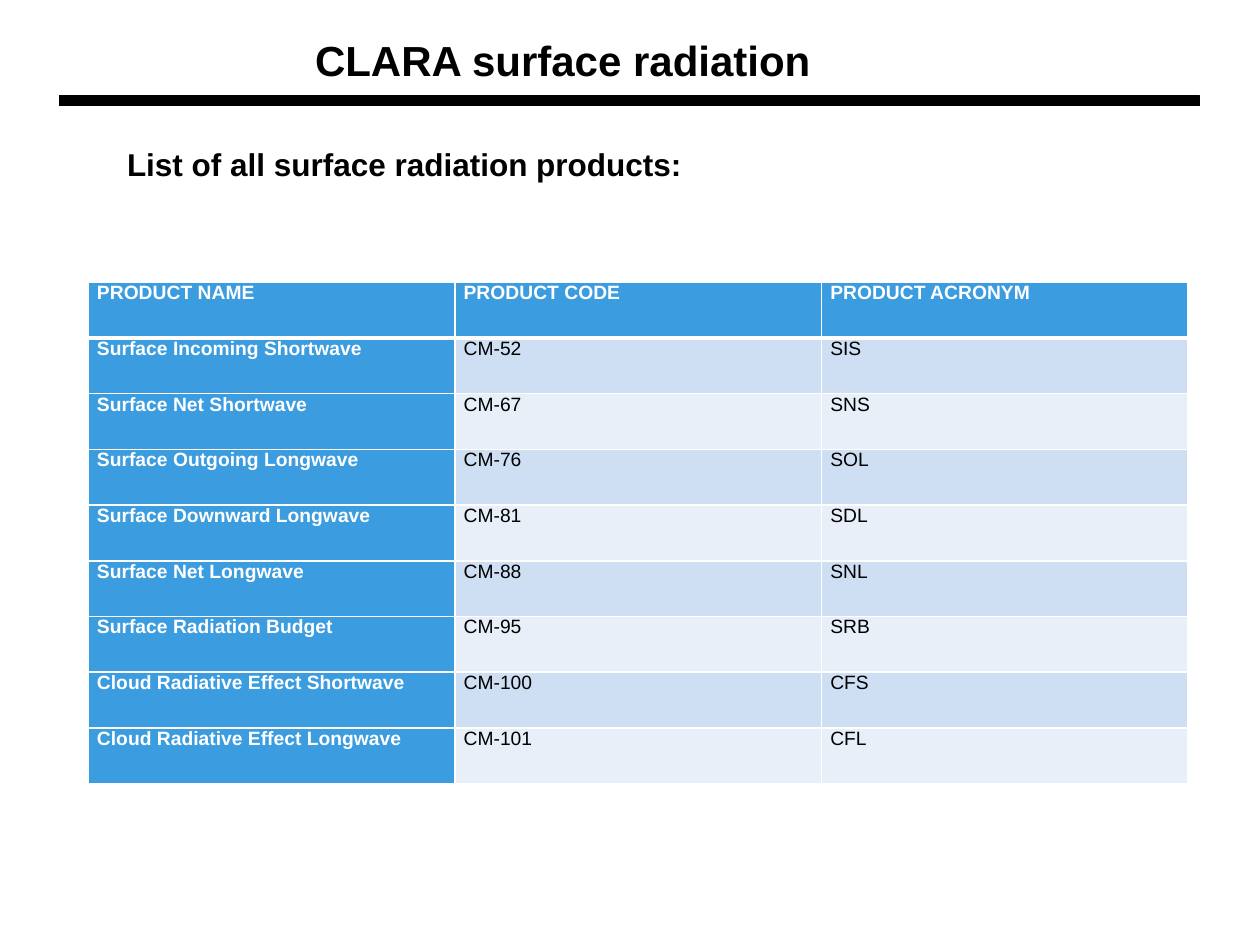
"""Build the slide that lists the CLARA surface radiation products."""
from typing import NamedTuple

from lxml import etree
from pptx import Presentation
from pptx.dml.color import RGBColor
from pptx.enum.shapes import MSO_SHAPE
from pptx.enum.text import MSO_ANCHOR, PP_ALIGN
from pptx.oxml.ns import qn
from pptx.util import Inches, Pt

RECTANGLE = MSO_SHAPE.RECTANGLE
TOP = MSO_ANCHOR.TOP
LEFT = PP_ALIGN.LEFT
TITLE_ONLY = 5
FONT = "Arial"
COLORS = {
    "black": "000000",
    "white": "FFFFFF",
    "header": "3B9CDF",
    "odd_row": "CEDEF3",
    "even_row": "E8EFF9",
}


class Product(NamedTuple):
    name: str
    code: str
    acronym: str


HEADINGS = Product("PRODUCT NAME", "PRODUCT CODE", "PRODUCT ACRONYM")
PRODUCTS = [
    Product("Surface Incoming Shortwave", "CM-52", "SIS"),
    Product("Surface Net Shortwave", "CM-67", "SNS"),
    Product("Surface Outgoing Longwave", "CM-76", "SOL"),
    Product("Surface Downward Longwave", "CM-81", "SDL"),
    Product("Surface Net Longwave", "CM-88", "SNL"),
    Product("Surface Radiation Budget", "CM-95", "SRB"),
    Product("Cloud Radiative Effect Shortwave", "CM-100", "CFS"),
    Product("Cloud Radiative Effect Longwave", "CM-101", "CFL"),
]


def color(name: str) -> RGBColor:
    return RGBColor.from_string(COLORS[name])


def write_text(frame, text: str, *, size: float, bold: bool = True,
               ink: str = "black", after: float = 0) -> None:
    frame.word_wrap = True
    frame.vertical_anchor = TOP
    para = frame.paragraphs[0]
    para.alignment = LEFT
    para.space_before = Pt(0)
    para.space_after = Pt(after)
    span = para.add_run()
    span.text = text
    span.font.name = FONT
    span.font.size = Pt(size)
    span.font.bold = bold
    span.font.color.rgb = color(ink)


def place(shape, left: float, top: float, width: float, height: float) -> None:
    shape.left, shape.top = Inches(left), Inches(top)
    shape.width, shape.height = Inches(width), Inches(height)


def add_borders(cell, **widths: float) -> None:
    properties = cell._tc.get_or_add_tcPr()
    for side, width in widths.items():
        line = etree.SubElement(properties, qn(f"a:ln{side}"), w=str(Pt(width)))
        fill = etree.SubElement(line, qn("a:solidFill"))
        etree.SubElement(fill, qn("a:srgbClr"), val=COLORS["white"])


def fill_cell(cell, text: str, row: int, column: int) -> None:
    heading = row == 0 or column == 0
    band = "odd_row" if row % 2 else "even_row"
    add_borders(cell, L=1, R=1, T=3 if row == 1 else 1, B=3 if row == 0 else 1)
    cell.fill.solid()
    cell.fill.fore_color.rgb = color("header" if heading else band)
    cell.margin_left = cell.margin_right = Inches(0.07)
    cell.margin_top = cell.margin_bottom = 0
    write_text(cell.text_frame, text, size=11, bold=heading,
               ink="white" if heading else "black", after=2)
    cell.vertical_anchor = TOP


def add_product_table(page) -> None:
    rows = [HEADINGS, *PRODUCTS]
    table = page.shapes.add_table(
        len(rows), len(HEADINGS), Inches(0.7), Inches(2.24),
        Inches(8.73), Inches(3.98)).table
    for row, product in enumerate(rows):
        for column, text in enumerate(product):
            fill_cell(table.cell(row, column), text, row, column)


def add_rule(page) -> None:
    rule = page.shapes.add_shape(
        RECTANGLE, Inches(0.47), Inches(0.76), Inches(9.05), Inches(0.08))
    rule.shadow.inherit = False
    rule.fill.solid()
    rule.fill.fore_color.rgb = color("black")
    rule.line.color.rgb = color("black")
    rule.line.width = Pt(0.75)


def main() -> None:
    deck = Presentation()
    deck.slide_width, deck.slide_height = Inches(10), Inches(7.5)
    page = deck.slides.add_slide(deck.slide_layouts[TITLE_ONLY])
    add_rule(page)
    box = page.shapes.add_textbox(
        Inches(0.91), Inches(1.1), Inches(9.42), Inches(0.4))
    write_text(box.text_frame, "List of all surface radiation products:", size=18)
    add_product_table(page)
    title = page.shapes.title
    place(title, 2.4, 0.22, 5.38, 0.5)
    write_text(title.text_frame, "CLARA surface radiation", size=24)
    deck.save("out.pptx")


if __name__ == "__main__":
    main()
